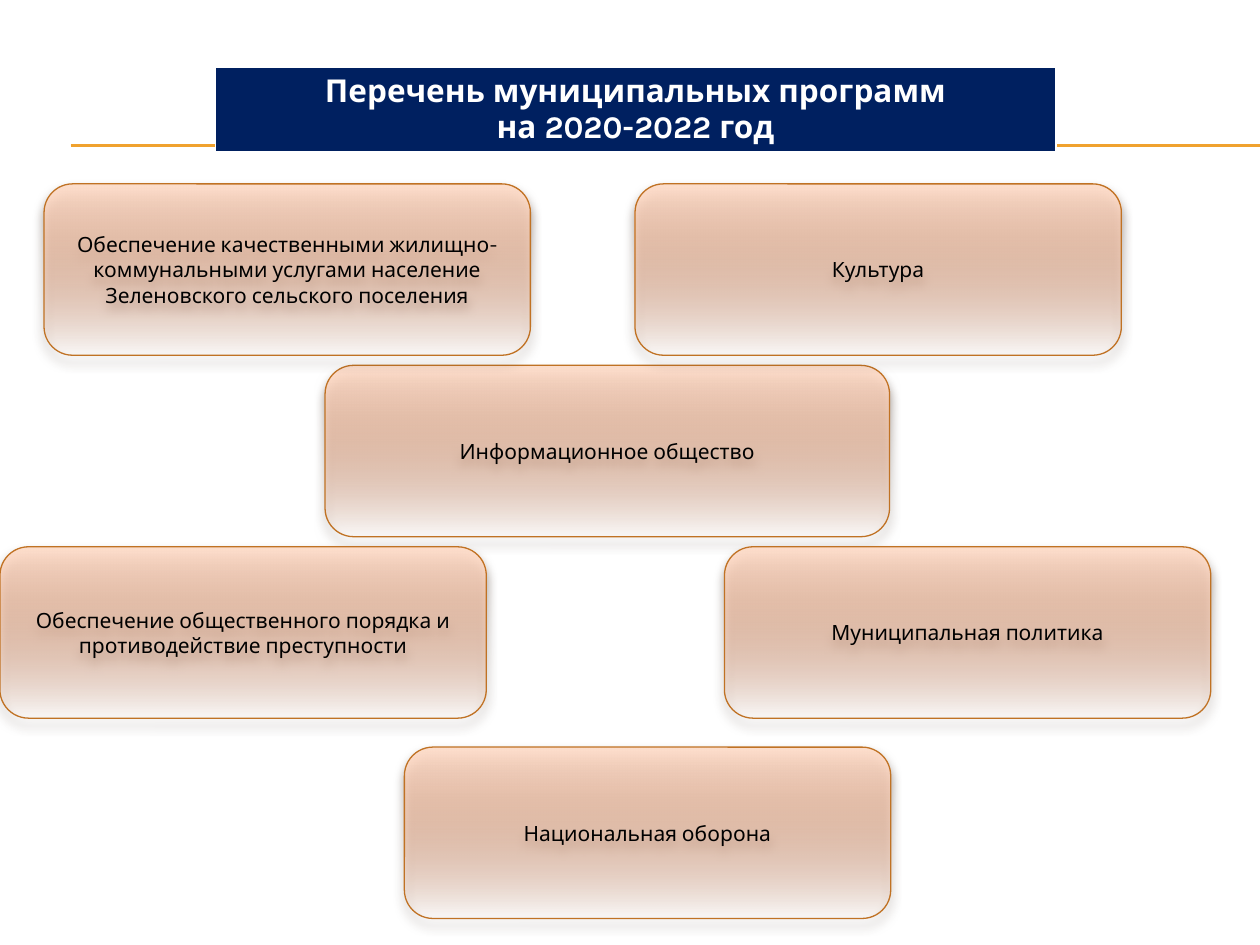
from dataclasses import dataclass

from lxml import etree
from pptx import Presentation
from pptx.dml.color import RGBColor
from pptx.enum.shapes import MSO_CONNECTOR, MSO_SHAPE
from pptx.enum.text import MSO_ANCHOR, PP_ALIGN
from pptx.oxml.ns import qn
from pptx.util import Inches, Pt

STRAIGHT = MSO_CONNECTOR.STRAIGHT
ROUNDED = MSO_SHAPE.ROUNDED_RECTANGLE
MIDDLE = MSO_ANCHOR.MIDDLE
CENTER = PP_ALIGN.CENTER
BLANK_LAYOUT = 6
CARD_WIDTH = 3.86
CARD_HEIGHT = 1.36


@dataclass(frozen=True)
class Theme:
    """Colours, font and sizes used on the slide."""

    font: str = "Karla"
    title_size: float = 18
    card_size: float = 12
    white: str = "FFFFFF"
    black: str = "000000"
    navy: str = "002060"
    gold: str = "F0A22E"
    card_top: str = "FDDDCB"
    card_bottom: str = "F79B69"
    card_line: str = "C07224"
    shadow: str = "4E3B30"
    line_width: float = 0.75


THEME = Theme()
TITLE = ("Перечень муниципальных программ", "на 2020-2022 год")
PROGRAMS = (
    ("Информационное общество", 2.58, 2.9, 4.48),
    ("Муниципальная политика", 5.75, 4.34, CARD_WIDTH),
    ("Обеспечение общественного порядка и противодействие преступности",
     0, 4.34, CARD_WIDTH),
    ("Обеспечение качественными жилищно-коммунальными услугами население "
     "Зеленовского сельского поселения", 0.35, 1.46, CARD_WIDTH),
    ("Культура", 5.04, 1.46, CARD_WIDTH),
    ("Национальная оборона", 3.21, 5.93, CARD_WIDTH),
)


def rgb(value):
    """Turn a hex string into a colour."""
    return RGBColor.from_string(value)


def add_child(parent, tag, **attributes):
    """Append a drawing element with its attributes."""
    child = etree.SubElement(parent, qn(tag))
    for name, value in attributes.items():
        child.set(name, str(value))
    return child


def write_lines(frame, lines, size, color, bold=False):
    """Write centred paragraphs into a text frame."""
    for index, line in enumerate(lines):
        para = frame.add_paragraph() if index else frame.paragraphs[0]
        para.alignment = CENTER
        span = para.add_run()
        span.text = line
        span.font.name = THEME.font
        span.font.size = Pt(size)
        span.font.bold = bold
        span.font.color.rgb = rgb(color)


def add_rule(page, top):
    """Draw a thin gold line reaching the right edge."""
    rule = page.shapes.add_connector(
        STRAIGHT, Inches(0.56), Inches(top), Inches(10), Inches(top))
    rule.line.color.rgb = rgb(THEME.gold)
    rule.line.width = Pt(THEME.line_width)
    add_child(rule.element.spPr, "a:effectLst")


def add_border(cell, side, width):
    """Give one side of a cell a white border."""
    border = add_child(cell._tc.get_or_add_tcPr(), f"a:ln{side}", w=Pt(width))
    add_child(add_child(border, "a:solidFill"), "a:srgbClr", val=THEME.white)


def add_banner(page):
    """Add the one-cell table holding the heading."""
    table = page.shapes.add_table(
        1, 1, Inches(1.71), Inches(0.53), Inches(6.67), Inches(0.41)).table
    table.horz_banding = False
    cell = table.cell(0, 0)
    for side, width in (("L", 0.96), ("R", 0.96), ("T", 0.96), ("B", 3)):
        add_border(cell, side, width)
    cell.fill.solid()
    cell.fill.fore_color.rgb = rgb(THEME.navy)
    write_lines(cell.text_frame, TITLE, THEME.title_size, THEME.white, True)


def fade_fill(box):
    """Fill a box with a gradient that fades out downwards."""
    box.fill.gradient()
    box.fill.gradient_angle = 270
    colors = (THEME.card_top, THEME.card_bottom)
    for stop, color in zip(box.fill.gradient_stops, colors):
        stop.color.rgb = rgb(color)
    last_color = list(box.element.spPr.iter(qn("a:srgbClr")))[-1]
    add_child(last_color, "a:alpha", val=0)


def add_shadow(box):
    """Cast a soft shadow below a box."""
    box.shadow.inherit = False
    effects = box.element.spPr.find(qn("a:effectLst"))
    shadow = add_child(effects, "a:outerShdw", blurRad=Pt(6), dist=Pt(4),
                       dir=90 * 60000, algn="ctr", rotWithShape=0)
    color = add_child(shadow, "a:srgbClr", val=THEME.shadow)
    add_child(color, "a:alpha", val=60000)


def add_card(page, label, left, top, width):
    """Add a rounded card naming one program."""
    box = page.shapes.add_shape(
        ROUNDED, Inches(left), Inches(top), Inches(width), Inches(CARD_HEIGHT))
    fade_fill(box)
    box.line.color.rgb = rgb(THEME.card_line)
    box.line.width = Pt(THEME.line_width)
    add_shadow(box)
    box.text_frame.word_wrap = True
    box.text_frame.vertical_anchor = MIDDLE
    write_lines(box.text_frame, [label], THEME.card_size, THEME.black)


def main():
    """Build the slide and save the deck."""
    deck = Presentation()
    deck.slide_width, deck.slide_height = Inches(10), Inches(7.5)
    page = deck.slides.add_slide(deck.slide_layouts[BLANK_LAYOUT])
    for top in (1.15, 1.16):
        add_rule(page, top)
    add_banner(page)
    for program in PROGRAMS:
        add_card(page, *program)
    deck.save("out.pptx")


if __name__ == "__main__":
    main()
